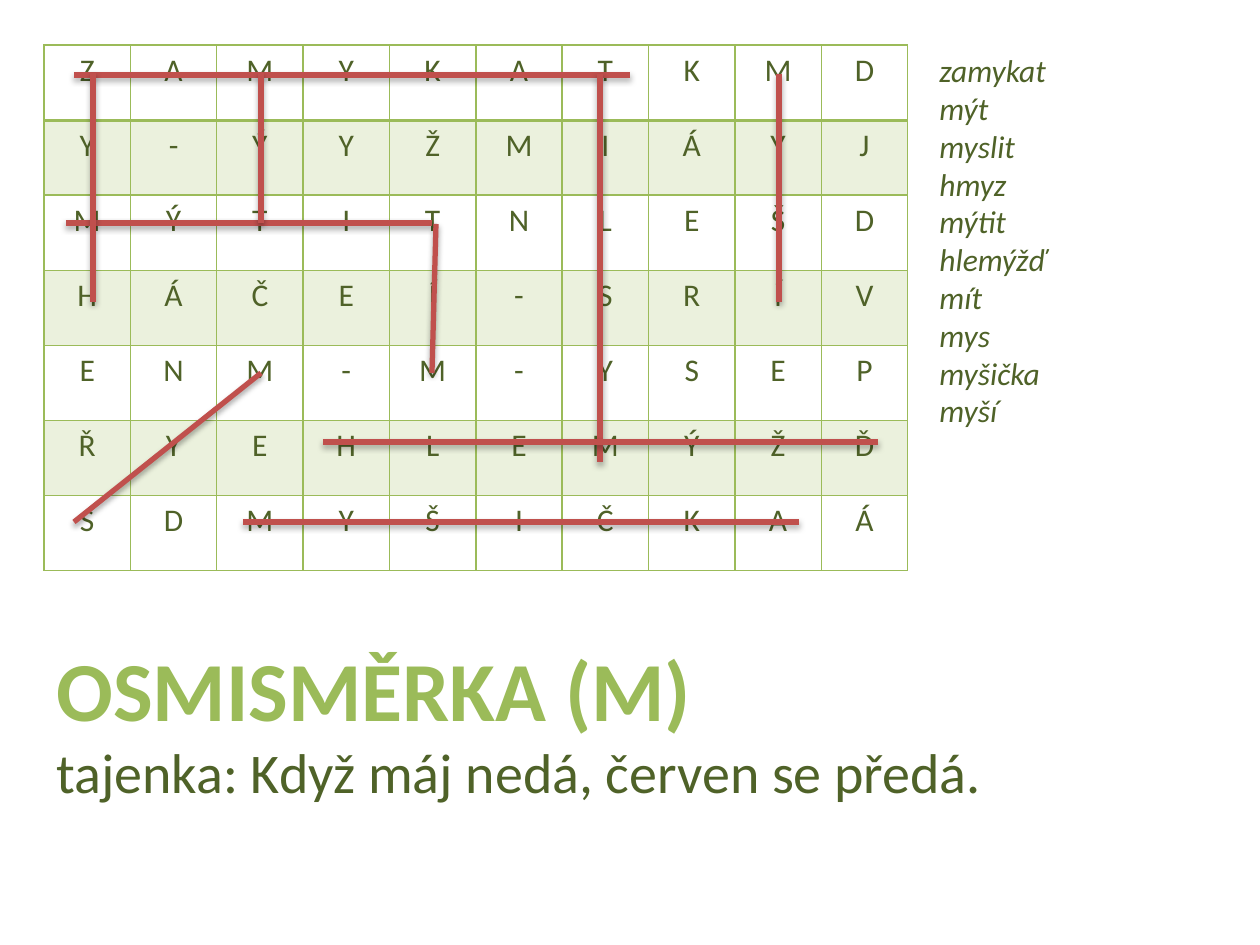
import pptx
import pptx.util
import pptx.dml.color
import pptx.enum.shapes
import pptx.enum.text
import pptx.oxml
import pptx.oxml.ns

RGBColor = pptx.dml.color.RGBColor
GREEN = RGBColor(0x9B, 0xBB, 0x59)
DARK_GREEN = RGBColor(0x4F, 0x62, 0x28)
RED = RGBColor(0xC0, 0x50, 0x4D)
OFF_WHITE = RGBColor(0xFE, 0xFE, 0xFE)

FONT = "Calibri"
PX = 914400 / 126
NS = pptx.oxml.ns.nsdecls("a")


def px(length):
    return pptx.util.Emu(round(length * PX))


def line_xml(tag, color, width):
    return pptx.oxml.parse_xml(
        f'<a:{tag} {NS} w="{round(width * 12700)}"><a:solidFill>'
        f'<a:srgbClr val="{color}"/></a:solidFill></a:{tag}>')


def write(para, text, size=18, color=DARK_GREEN, bold=False, italic=False, outline=None):
    span = para.add_run()
    span.text = text
    span.font.name = FONT
    span.font.size = pptx.util.Pt(size)
    span.font.color.rgb = color
    span.font.bold = bold
    span.font.italic = italic
    if outline is not None:
        span.font._element.insert(0, line_xml("ln", outline, 1.5))


class PuzzleSlide:
    def __init__(self, deck):
        self.page = deck.slides.add_slide(deck.slide_layouts[6])

    def text(self, left, top, width, height, lines):
        """Each line is a pair of text and format."""
        box = self.page.shapes.add_textbox(px(left), px(top), px(width), px(height))
        frame = box.text_frame
        frame.word_wrap = True
        frame.auto_size = pptx.enum.text.MSO_AUTO_SIZE.SHAPE_TO_FIT_TEXT
        for index, (text, style) in enumerate(lines):
            para = frame.add_paragraph() if index else frame.paragraphs[0]
            write(para, text, **style)

    def letter_grid(self, left, top, width, height, rows):
        frame = self.page.shapes.add_table(
            len(rows), len(rows[0]), px(left), px(top), px(width), px(height))
        table = frame.table
        table.first_row = False
        table.horz_banding = False
        for column in table.columns:
            column.width = px(width / len(rows[0]))
        for r, letters in enumerate(rows):
            table.rows[r].height = px(height / len(rows))
            for c, letter in enumerate(letters):
                self.cell(table.cell(r, c), letter, r)

    def cell(self, cell, letter, row):
        para = cell.text_frame.paragraphs[0]
        para.alignment = pptx.enum.text.PP_ALIGN.CENTER
        write(para, letter)
        # A heavier rule separates the first row from the rest
        widths = {"lnL": 1, "lnR": 1, "lnT": 2 if row == 1 else 1, "lnB": 2 if row == 0 else 1}
        properties = cell._tc.get_or_add_tcPr()
        for tag, width in widths.items():
            properties.append(line_xml(tag, GREEN, width))
        if row % 2:
            cell.fill.solid()
            cell.fill.fore_color.rgb = GREEN
            color = properties.find(".//" + pptx.oxml.ns.qn("a:solidFill") + "[last()]")
            color = properties[-1][0]
            color.append(pptx.oxml.parse_xml(f'<a:alpha {NS} val="20000"/>'))
        else:
            cell.fill.background()

    def strike(self, x1, y1, x2, y2):
        line = self.page.shapes.add_connector(
            pptx.enum.shapes.MSO_CONNECTOR.STRAIGHT, px(x1), px(y1), px(x2), px(y2))
        line.line.color.rgb = RED
        line.line.width = pptx.util.Pt(3)
        line._element.spPr.append(pptx.oxml.parse_xml(
            f'<a:effectLst {NS}><a:outerShdw blurRad="40000" dist="23000" dir="5400000" '
            'rotWithShape="0"><a:srgbClr val="000000"><a:alpha val="35000"/></a:srgbClr>'
            '</a:outerShdw></a:effectLst>'))


LETTERS = ["ZAMYKATKMD", "Y-ÝYŽMIÁYJ", "MÝTITNLEŠD", "HÁČEÍ-SRÍV",
           "ENM-M-YSEP", "ŘYEHLEMÝŽĎ", "SDMYŠIČKAÁ"]
WORDS = ["zamykat", "mýt", "myslit", "hmyz", "mýtit",
         "hlemýžď", "mít", "mys", "myšička", "myší"]
STRIKES = [
    (74, 75, 630, 75),     # zamykat
    (779, 302, 779, 74),   # myší
    (600, 462, 600, 74),   # myslit
    (323, 442, 878, 442),  # hlemýžď
    (74, 522, 261, 373),   # mys
    (243, 522, 799, 522),  # myšička
    (66, 223, 432, 223),   # mýtit
    (93, 302, 93, 73),     # hmyz
    (261, 223, 261, 73),   # mýt
    (432, 373, 436, 224),  # mít
]


def main():
    deck = pptx.Presentation()
    deck.slide_width, deck.slide_height = px(1260), px(945)
    slide = PuzzleSlide(deck)

    # Title and solution
    slide.text(44, 631, 1171, 183, [
        ("OSMISMĚRKA (M)", dict(size=48, color=GREEN, bold=True, outline=OFF_WHITE)),
        ("tajenka: Když máj nedá, červen se předá.", dict(size=32)),
    ])

    # Letter grid and the words to find
    slide.letter_grid(44, 45, 864, 526, LETTERS)
    slide.text(927, 45, 307, 394, [(word, dict(italic=True)) for word in WORDS])

    # Lines through the found words
    for ends in STRIKES:
        slide.strike(*ends)

    deck.save("out.pptx")


if __name__ == "__main__":
    main()
